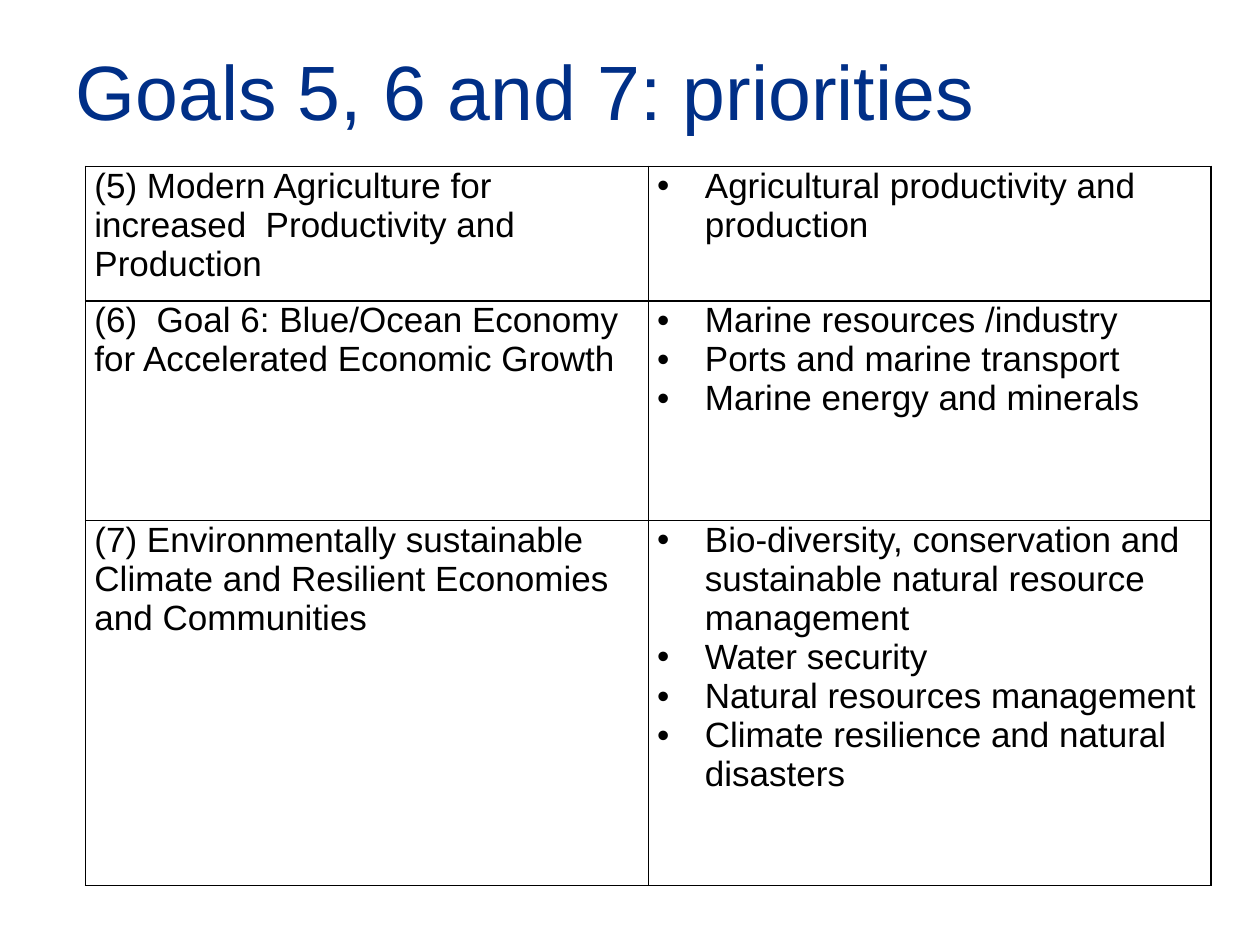
import pptx
import pptx.util
import pptx.oxml
import pptx.oxml.ns
import pptx.dml.color
import pptx.enum.text
from pptx.util import Inches

NAVY = pptx.dml.color.RGBColor(0x00, 0x2F, 0x87)
BLACK = pptx.dml.color.RGBColor(0x00, 0x00, 0x00)
TITLE = "Goals 5, 6 and 7: priorities"
WIDTHS = [4.465, 4.465]
HEIGHTS = [1.07, 1.74, 2.9]
GOALS = [
    ("(5) Modern Agriculture for increased  Productivity and Production",
     ["Agricultural productivity and production"]),
    ("(6)  Goal 6: Blue/Ocean Economy for Accelerated Economic Growth",
     ["Marine resources /industry",
      "Ports and marine transport",
      "Marine energy and minerals"]),
    ("(7) Environmentally sustainable Climate and Resilient Economies and Communities",
     ["Bio-diversity, conservation and sustainable natural resource management",
      "Water security",
      "Natural resources management",
      "Climate resilience and natural disasters"]),
]


def node(xml):
    return pptx.oxml.parse_xml(xml.replace(" ", f" {pptx.oxml.ns.nsdecls('a')} ", 1))


def write(para, text, size=20, color=BLACK, font="Arial", bullet=False):
    para.alignment = pptx.enum.text.PP_ALIGN.LEFT
    run = para.add_run()
    run.text = text
    run.font.size = pptx.util.Pt(size)
    run.font.name = font
    run.font.color.rgb = color
    if bullet:
        props = para._p.get_or_add_pPr()
        props.set("marL", str(Inches(0.38)))
        props.set("indent", str(-Inches(0.38)))
        props.append(node('<a:buFont typeface="Arial"/>'))
        props.append(node('<a:buChar char="•"/>'))


class Deck:
    """Holds the text style and the current slide."""

    def __init__(self):
        self.file = pptx.Presentation()
        self.file.slide_width = Inches(10)
        self.file.slide_height = Inches(7.5)
        self.slide = self.file.slides.add_slide(self.file.slide_layouts[5])
        self.pad = Inches(0.07)
        self.line = pptx.util.Pt(1)

    def title(self, text, left, top, width, height):
        shape = self.slide.shapes.title
        shape.left, shape.top = Inches(left), Inches(top)
        shape.width, shape.height = Inches(width), Inches(height)
        frame = shape.text_frame
        frame.vertical_anchor = pptx.enum.text.MSO_ANCHOR.MIDDLE
        write(frame.paragraphs[0], text, size=44, color=NAVY)

    def cell(self, cell, lines, bullet=False):
        cell.margin_left = cell.margin_right = self.pad
        cell.margin_top = cell.margin_bottom = 0
        props = cell._tc.get_or_add_tcPr()
        for side in "LRTB":
            props.append(node(
                f'<a:ln{side} w="{self.line}"><a:solidFill>'
                f'<a:srgbClr val="{BLACK}"/></a:solidFill></a:ln{side}>'))
        cell.fill.background()
        frame = cell.text_frame
        for num, text in enumerate(lines):
            para = frame.add_paragraph() if num else frame.paragraphs[0]
            write(para, text, bullet=bullet)

    def table(self, goals, left, top):
        grid = self.slide.shapes.add_table(
            len(goals), len(WIDTHS), Inches(left), Inches(top),
            Inches(sum(WIDTHS)), Inches(sum(HEIGHTS))).table
        grid.first_row = grid.horz_banding = False
        for col, width in zip(grid.columns, WIDTHS):
            col.width = Inches(width)
        for row, height, (goal, items) in zip(grid.rows, HEIGHTS, goals):
            row.height = Inches(height)
            self.cell(row.cells[0], [goal])
            self.cell(row.cells[1], items, bullet=True)


def main():
    deck = Deck()
    deck.title(TITLE, 0.5, 0.11, 9, 1.21)
    deck.table(GOALS, 0.68, 1.32)
    deck.file.save("out.pptx")


if __name__ == "__main__":
    main()
